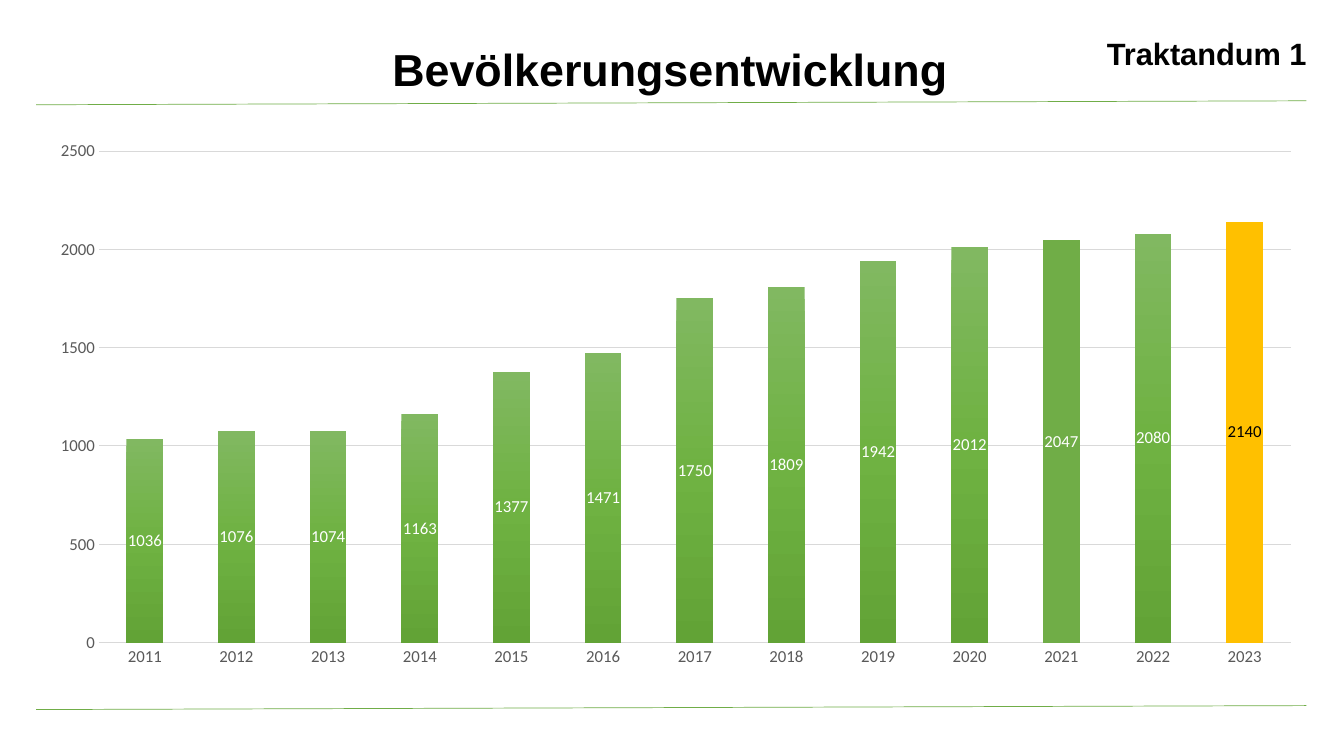
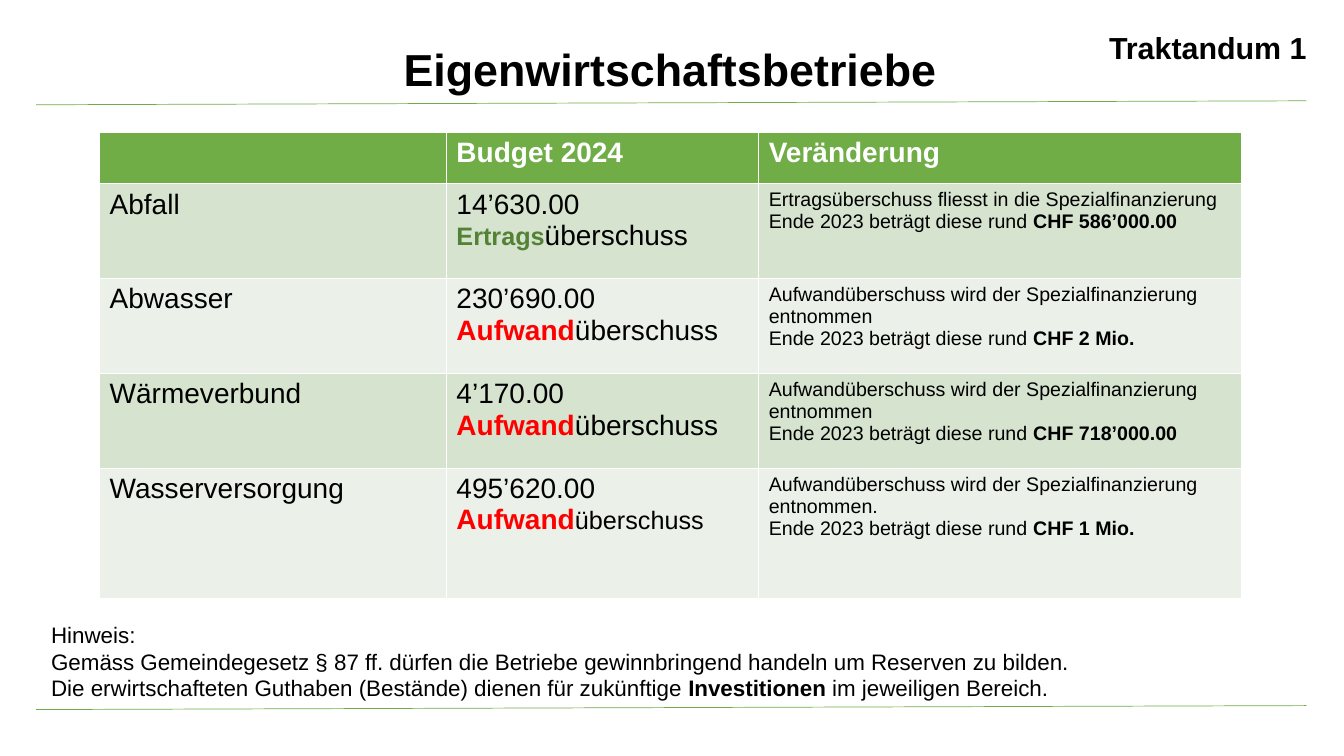
from lxml import etree
from pptx import Presentation
from pptx.chart.data import CategoryChartData
from pptx.dml.color import RGBColor
from pptx.enum.chart import XL_CHART_TYPE as ChartType, XL_LABEL_POSITION as LabelPos
from pptx.enum.chart import XL_TICK_MARK as TickMark
from pptx.enum.shapes import MSO_CONNECTOR as Connector
from pptx.enum.text import MSO_ANCHOR as Anchor, MSO_AUTO_SIZE as AutoSize, PP_ALIGN as Align
from pptx.oxml import parse_xml
from pptx.oxml.ns import nsdecls, qn
from pptx.util import Cm, Pt

BLACK = RGBColor(0x00, 0x00, 0x00)
WHITE = RGBColor(0xFF, 0xFF, 0xFF)
GREEN = RGBColor(0x70, 0xAD, 0x47)
DARK_GREEN = RGBColor(0x54, 0x82, 0x35)
RED = RGBColor(0xFF, 0x00, 0x00)
GOLD = RGBColor(0xFF, 0xC0, 0x00)
AXIS_TEXT = RGBColor(0x59, 0x59, 0x59)
GRID = RGBColor(0xD9, 0xD9, 0xD9)
BANDS = (RGBColor(0xD5, 0xE3, 0xCF), RGBColor(0xEB, 0xF1, 0xE9))
BAR_STOPS = (
    (0, RGBColor(0x81, 0xB8, 0x61)),
    (50, RGBColor(0x6F, 0xB2, 0x42)),
    (100, RGBColor(0x62, 0xA3, 0x36)),
)

POPULATION = {
    "2011": 1036, "2012": 1076, "2013": 1074, "2014": 1163, "2015": 1377,
    "2016": 1471, "2017": 1750, "2018": 1809, "2019": 1942, "2020": 2012,
    "2021": 2047, "2022": 2080, "2023": 2140,
}

EXPENSE = ("Aufwand", {"color": RED, "bold": True})
WITHDRAWAL = "Aufwandüberschuss wird der Spezialfinanzierung entnommen"
BALANCE = "Ende 2023 beträgt diese rund "


def strong(text):
    """Return a bold run."""
    return text, {"bold": True}


BUSINESSES = (
    ("Abfall",
     ["14’630.00", [("Ertrags", {"size": 18, "color": DARK_GREEN, "bold": True}), "überschuss"]],
     [["Ertragsüberschuss fliesst in die Spezialfinanzierung " + BALANCE,
       strong("CHF 586’000.00")]]),
    ("Abwasser",
     ["230’690.00", [EXPENSE, "überschuss"]],
     [WITHDRAWAL, [BALANCE, strong("CHF 2 Mio.")]]),
    ("Wärmeverbund",
     ["4’170.00", [EXPENSE, "überschuss"]],
     [WITHDRAWAL, [BALANCE, strong("CHF 718’000.00")]]),
    ("Wasserversorgung",
     ["495’620.00", [EXPENSE, ("überschuss", {"size": 18})]],
     [WITHDRAWAL + ".", [BALANCE, strong("CHF 1 Mio.")]]),
)

NOTE = [
    "Hinweis:",
    "Gemäss Gemeindegesetz § 87 ff. dürfen die Betriebe gewinnbringend handeln "
    "um Reserven zu bilden.",
    ["Die erwirtschafteten Guthaben (Bestände) dienen für zukünftige ",
     strong("Investitionen"), " im jeweiligen Bereich."],
]


def format_font(font, size=12, color=BLACK, bold=False, name="Arial"):
    """Set the face, size, colour and weight of a font."""
    font.name, font.size, font.bold = name, Pt(size), bold
    font.color.rgb = color


def write(tf, paragraphs, align=Align.LEFT, spacing=None, **fmt):
    """Fill a text frame with paragraphs given as strings or lists of runs."""
    tf.word_wrap = True
    for i, runs in enumerate(paragraphs):
        p = tf.add_paragraph() if i else tf.paragraphs[0]
        p.alignment = align
        if spacing:
            p.line_spacing = spacing
        for run in [runs] if isinstance(runs, str) else runs:
            text, changes = (run, {}) if isinstance(run, str) else run
            r = p.add_run()
            r.text = text
            format_font(r.font, **{**fmt, **changes})


def add_text(slide, box, paragraphs, **fmt):
    """Add a text box at the given left, top, width and height in centimetres."""
    sp = slide.shapes.add_textbox(*map(Cm, box))
    write(sp.text_frame, paragraphs, **fmt)


def add_rules(slide, layout):
    """Draw the two green rules and move them to the layout."""
    for y in (2.54, 17.78):
        line = slide.shapes.add_connector(
            Connector.STRAIGHT, Cm(0.91), Cm(y + 0.1), Cm(32.92), Cm(y))
        line.line.color.rgb = GREEN
        line.line.width = Pt(0.5)
        etree.SubElement(line.element.spPr, qn("a:effectLst"))
        layout.shapes.element.append(line.element)


def add_title(slide, text):
    """Place and format the slide title."""
    sp = slide.shapes.title
    sp.left, sp.top, sp.width, sp.height = map(Cm, (0.89, 1.07, 32, 2.03))
    tf = sp.text_frame
    tf.auto_size, tf.vertical_anchor = AutoSize.NONE, Anchor.TOP
    write(tf, [text], align=Align.CENTER, spacing=0.9, size=32, bold=True)


def add_agenda_tag(slide, size, spacing):
    """Add the agenda item at the top right."""
    add_text(slide, (26.27, 0.86, 6.91, 1.32), ["Traktandum 1"],
             align=Align.RIGHT, spacing=spacing, size=size, bold=True)


def fill_gradient(series):
    """Give the bars of a series a vertical gradient."""
    stops = "".join(
        f'<a:gs pos="{pos * 1000}"><a:srgbClr val="{color}"/></a:gs>'
        for pos, color in BAR_STOPS)
    grad = parse_xml(
        f'<a:gradFill {nsdecls("a")} rotWithShape="1"><a:gsLst>{stops}</a:gsLst>'
        '<a:lin ang="5400000" scaled="0"/></a:gradFill>')
    series.format.fill.solid()
    solid = next(series._element.iter(qn("a:solidFill")))
    solid.getparent().replace(solid, grad)


def format_axes(chart):
    """Format the axes and gridlines."""
    for axis in (chart.category_axis, chart.value_axis):
        axis.major_tick_mark = axis.minor_tick_mark = TickMark.NONE
        format_font(axis.tick_labels.font, color=AXIS_TEXT, name="Calibri")
    base = chart.category_axis.format.line
    base.color.rgb, base.width = GRID, Pt(1)
    values = chart.value_axis
    values.minimum_scale, values.maximum_scale, values.major_unit = 0, 2500, 500
    values.format.line.fill.background()
    grid = values.major_gridlines.format.line
    grid.color.rgb, grid.width = GRID, Pt(0.75)


def add_population_chart(slide):
    """Add the column chart of inhabitants per year."""
    data = CategoryChartData()
    data.categories = list(POPULATION)
    data.add_series("Series 1", list(POPULATION.values()))
    chart = slide.shapes.add_chart(
        ChartType.COLUMN_STACKED, Cm(0.89), Cm(3.28), Cm(32.28), Cm(13.79), data).chart
    chart.has_legend = chart.has_title = False
    format_font(chart.font, size=10, name="Calibri")
    format_axes(chart)
    plot = chart.plots[0]
    plot.gap_width, plot.overlap, plot.vary_by_categories = 150, 100, False
    series = plot.series[0]
    fill_gradient(series)
    for i, color in ((10, GREEN), (12, GOLD)):
        fill = series.points[i].format.fill
        fill.solid()
        fill.fore_color.rgb = color
    last_label = series.points[12].data_label
    format_font(last_label.font, name="Calibri")
    last_label.position = LabelPos.CENTER
    labels = series.data_labels
    labels.show_value, labels.position = True, LabelPos.CENTER
    format_font(labels.font, color=WHITE, name="Calibri")


def fill_cell(cell, background, paragraphs, **fmt):
    """Colour a table cell and write its text."""
    cell.fill.solid()
    cell.fill.fore_color.rgb = background
    write(cell.text_frame, paragraphs, **fmt)


def add_budget_table(slide):
    """Add the table of the self-financed businesses."""
    widths, heights = (8.74, 7.87, 12.17), (1.3, 2.39, 2.39, 2.39, 3.28)
    table = slide.shapes.add_table(
        len(heights), len(widths), Cm(2.51), Cm(3.33),
        Cm(sum(widths)), Cm(sum(heights))).table
    for column, width in zip(table.columns, widths):
        column.width = Cm(width)
    for row, height in zip(table.rows, heights):
        row.height = Cm(height)
    for c, head in enumerate(([], ["Budget 2024"], ["Veränderung"])):
        fill_cell(table.cell(0, c), GREEN, head, size=20, color=WHITE, bold=True)
    for r, (name, budget, change) in enumerate(BUSINESSES, 1):
        for c, (paragraphs, size) in enumerate((([name], 20), (budget, 20), (change, 14))):
            fill_cell(table.cell(r, c), BANDS[(r - 1) % 2], paragraphs, size=size)


def main():
    """Build and save the presentation."""
    prs = Presentation()
    prs.slide_width, prs.slide_height = Cm(33.87), Cm(19.05)
    layout = prs.slide_layouts[5]

    slide = prs.slides.add_slide(layout)
    add_rules(slide, layout)
    add_title(slide, "Bevölkerungsentwicklung")
    add_agenda_tag(slide, size=22, spacing=0.9)
    add_population_chart(slide)

    slide = prs.slides.add_slide(layout)
    add_title(slide, "Eigenwirtschaftsbetriebe")
    add_agenda_tag(slide, size=21.7, spacing=0.7)
    add_budget_table(slide)
    add_text(slide, (1.04, 15.52, 31.85, 2.39), NOTE, size=16)

    prs.save("out.pptx")


if __name__ == "__main__":
    main()
